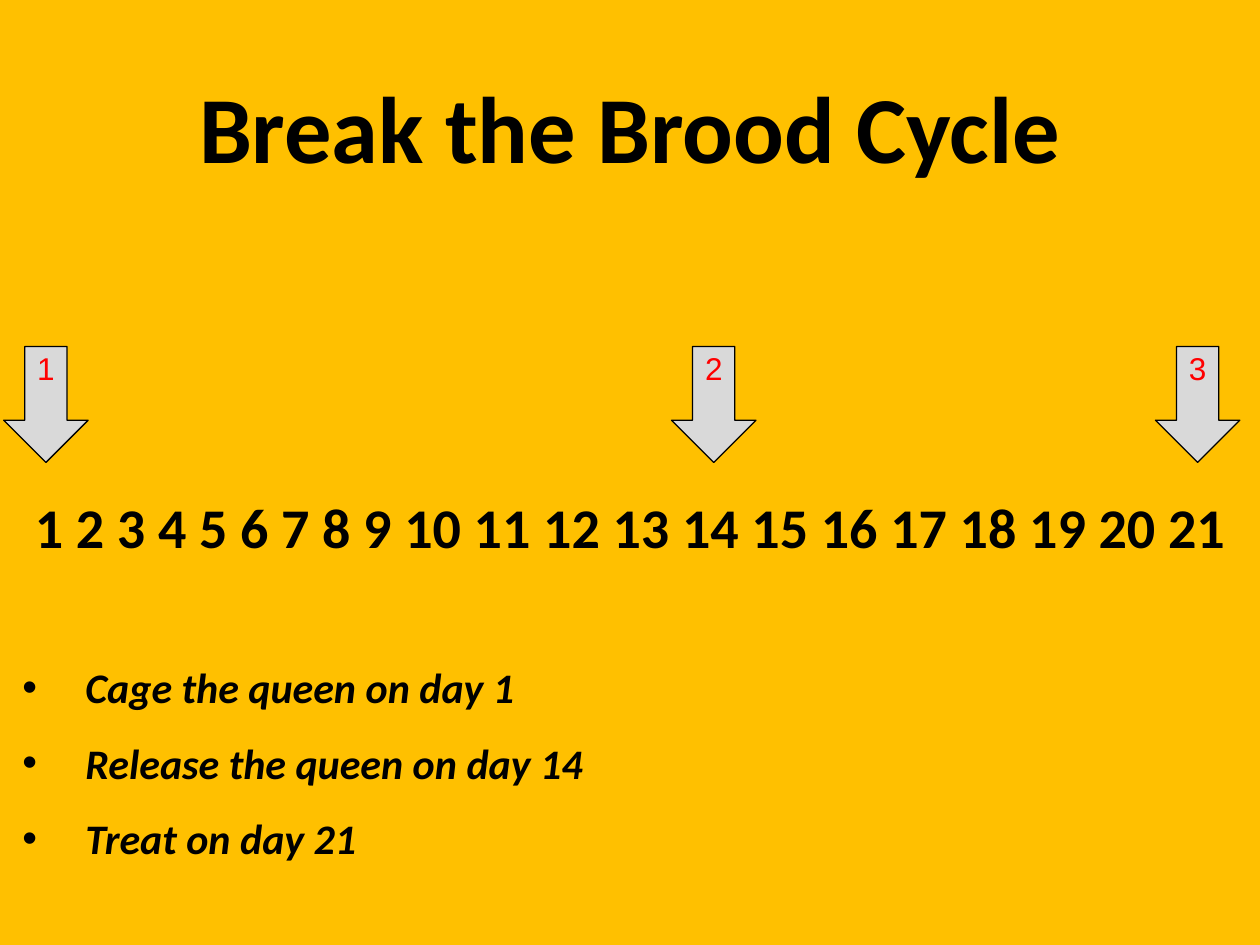
from pptx import Presentation, util as u
from pptx.dml.color import RGBColor
from pptx.enum import shapes, text
from pptx.oxml import parse_xml
from pptx.oxml.ns import nsdecls

AMBER = RGBColor(0xFF, 0xC0, 0x00)
BLACK = RGBColor(0, 0, 0)
GREY = RGBColor(0xD9, 0xD9, 0xD9)
RED = RGBColor(0xFF, 0, 0)


class BroodSlide:
    """Holds the style and the current slide, and draws each kind of element."""

    def __init__(self, deck):
        self.heading_font, self.marker_font = "Calibri", "Arial"
        self.slide = deck.slides.add_slide(deck.slide_layouts[6])
        self.slide.background.fill.solid()
        self.slide.background.fill.fore_color.rgb = AMBER

    def styled_run(self, paragraph, words, font, size, color, bold=False, italic=False):
        run = paragraph.add_run()
        run.text = words
        run.font.name, run.font.size = font, u.Pt(size)
        run.font.color.rgb = color
        run.font.bold, run.font.italic = bold, italic

    def frame(self, left, top, width, height):
        box = self.slide.shapes.add_textbox(*map(u.Inches, (left, top, width, height)))
        box.text_frame.word_wrap = True
        box.text_frame.auto_size = text.MSO_AUTO_SIZE.SHAPE_TO_FIT_TEXT
        return box.text_frame

    def heading(self, words, size, *place):
        paragraph = self.frame(*place).paragraphs[0]
        paragraph.alignment = text.PP_ALIGN.CENTER
        self.styled_run(paragraph, words, self.heading_font, size, BLACK, bold=True)

    def bullets(self, steps, size, *place):
        body = self.frame(*place)
        for index, step in enumerate(steps):
            paragraph = body.add_paragraph() if index else body.paragraphs[0]
            paragraph.line_spacing = 1.5
            properties = paragraph._p.get_or_add_pPr()
            properties.set("marL", str(u.Inches(0.5)))
            properties.set("indent", str(u.Inches(-0.5)))
            for xml in ('<a:buFont {} typeface="Arial"/>', '<a:buChar {} char="•"/>'):
                properties.append(parse_xml(xml.format(nsdecls("a"))))
            self.styled_run(paragraph, step, self.heading_font, size, BLACK, True, True)

    def marker(self, label, left):
        arrow = self.slide.shapes.add_shape(
            shapes.MSO_SHAPE.DOWN_ARROW,
            *map(u.Inches, (left, 2.75, 0.67, 0.92)))
        arrow.shadow.inherit = False
        arrow.fill.solid()
        arrow.fill.fore_color.rgb = GREY
        arrow.line.color.rgb, arrow.line.width = BLACK, u.Pt(0.75)
        arrow.text_frame.vertical_anchor = text.MSO_ANCHOR.TOP
        paragraph = arrow.text_frame.paragraphs[0]
        paragraph.alignment = text.PP_ALIGN.LEFT
        paragraph.line_spacing = 0.93
        self.styled_run(paragraph, label, self.marker_font, 18, RED)


def main():
    deck = Presentation()
    deck.slide_width, deck.slide_height = u.Inches(10), u.Inches(7.5)
    brood = BroodSlide(deck)
    brood.heading("Break the Brood Cycle", 54, 0, 0.5, 10, 1.01)
    steps = ["Cage the queen on day 1", "Release the queen on day 14", "Treat on day 21"]
    brood.bullets(steps, 24, 0.08, 5, 9.92, 1.92)
    days = " ".join(str(day) for day in range(1, 22))
    brood.heading(days, 32, 0.17, 3.86, 9.67, 0.64)
    for number, left in enumerate((0.03, 5.33, 9.17), start=1):
        brood.marker(str(number), left)
    deck.save("out.pptx")


if __name__ == "__main__":
    main()
